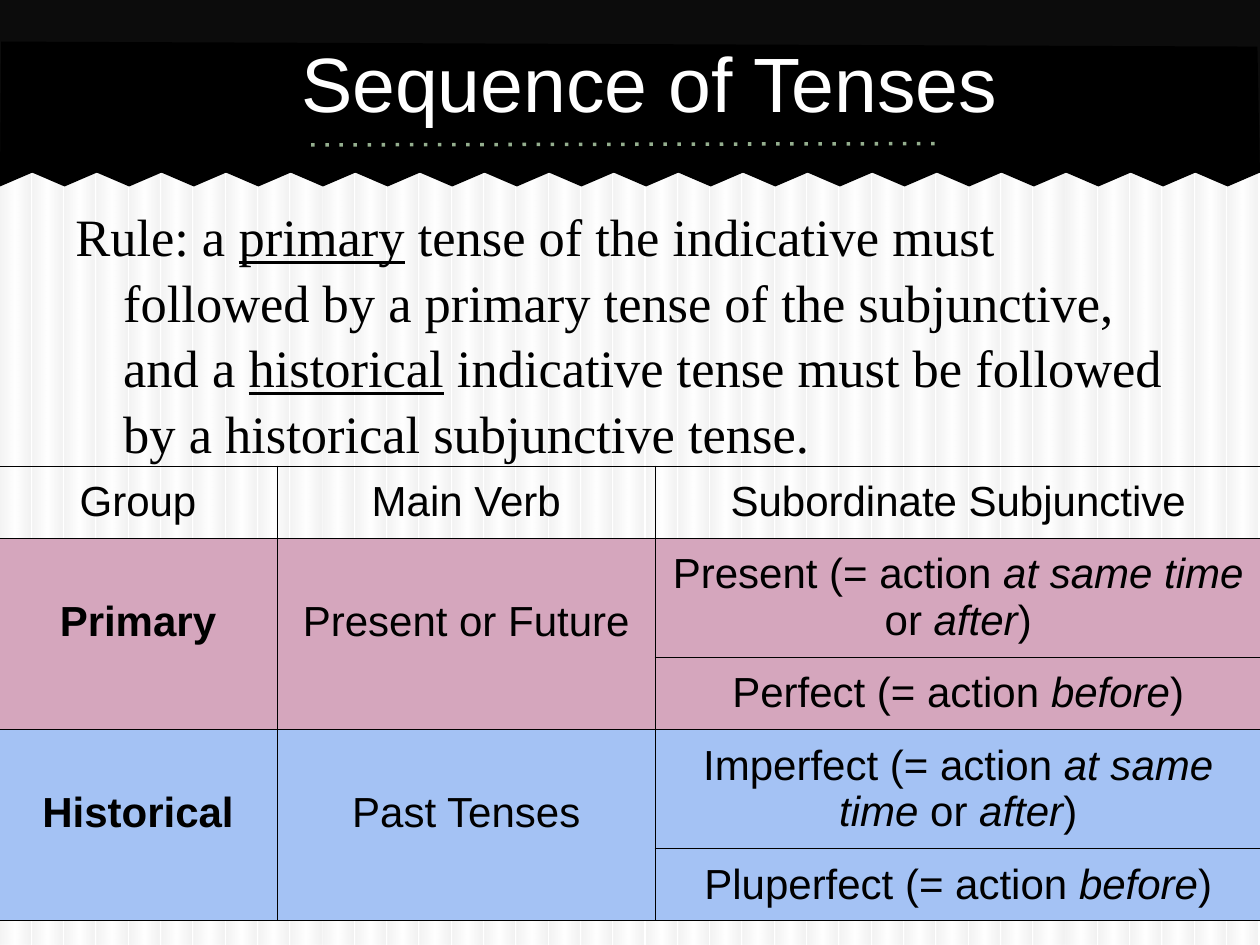
from lxml import etree
from pptx import Presentation, util as u
from pptx.dml.color import RGBColor
from pptx.enum import shapes, text
from pptx.oxml import parse_xml
from pptx.oxml.ns import nsdecls, qn

COLUMNS, ROWS = 100, 75
STRIPES = 39
SANS, SERIF = "Arial", "Times New Roman"
BLACK, WHITE = "000000", "FFFFFF"
PINK, BLUE = "D5A6BD", "A4C2F4"


def rgb(hex_code):
    return RGBColor.from_string(hex_code)


def grid(steps):
    """Length of a number of grid columns or rows, each a tenth of an inch."""
    return u.Inches(steps / 10)


class TenseSlide:
    """Holds the deck's style and the slide being drawn."""

    margins = dict.fromkeys(
        ("margin_left", "margin_right", "margin_top", "margin_bottom"), grid(1))

    def __init__(self):
        self.deck = Presentation()
        self.deck.slide_width, self.deck.slide_height = grid(COLUMNS), grid(ROWS)
        self.slide = self.deck.slides.add_slide(self.deck.slide_layouts[5])
        self.shapes = self.slide.shapes

    def apply(self, target, formats):
        for name, value in formats.items():
            setattr(target, name, value)

    def place(self, shape, left, top, width, height):
        sides = zip(("left", "top", "width", "height"), (left, top, width, height))
        self.apply(shape, {name: grid(steps) for name, steps in sides})

    def paint(self, shape, color):
        shape.shadow.inherit = False
        shape.line.fill.background()
        shape.fill.solid()
        shape.fill.fore_color.rgb = rgb(color)

    def add_runs(self, paragraph, runs, size, font, color=BLACK, align=text.PP_ALIGN.CENTER):
        """Fill a paragraph from (words, format dict) pairs."""
        paragraph.alignment = align
        for words, formats in runs:
            run = paragraph.add_run()
            run.text = words
            run.font.color.rgb = rgb(color)
            self.apply(run.font, {"size": u.Pt(size), "name": font, "bold": False, **formats})

    def indent(self, paragraph, left, first):
        properties = paragraph._p.get_or_add_pPr()
        properties.set("marL", str(grid(left)))
        properties.set("indent", str(grid(first)))

    def rectangle(self, left, top, width, height, color):
        box = self.shapes.add_shape(
            shapes.MSO_SHAPE.RECTANGLE, *map(grid, (left, top, width, height)))
        self.paint(box, color)
        return box

    def stripe(self, left, width):
        """Full-height stripe, faint grey at both edges and white in the middle."""
        band = self.rectangle(left, 0.1, width, ROWS - 0.1, WHITE)
        stops = "".join(
            f'<a:gs pos="{share}000"><a:srgbClr val="{color}"><a:alpha val="19000"/>'
            "</a:srgbClr></a:gs>"
            for share, color in ((0, "BFBFBF"), (50, WHITE), (97, "BFBFBF"), (100, "BFBFBF")))
        gradient = parse_xml(
            f'<a:gradFill {nsdecls("a")} rotWithShape="1"><a:gsLst>{stops}</a:gsLst>'
            '<a:lin ang="0" scaled="0"/></a:gradFill>')
        properties = band._element.spPr
        properties.replace(properties.find(qn("a:solidFill")), gradient)

    def outline(self, points, color):
        corners = [(grid(x), grid(y)) for x, y in points]
        builder = self.shapes.build_freeform(*corners[0])
        builder.add_line_segments(corners[1:], close=True)
        self.paint(builder.convert_to_shape(), color)

    def dotted_line(self, start, end, color, width):
        rule = self.shapes.add_connector(
            shapes.MSO_CONNECTOR.STRAIGHT, *map(grid, start + end))
        rule.line.color.rgb = rgb(color)
        rule.line.width = u.Pt(width)
        dash = etree.SubElement(rule.line._get_or_add_ln(), qn("a:prstDash"))
        dash.set("val", "dot")
        etree.SubElement(rule._element.spPr, qn("a:effectLst"))

    def title(self, words, *place):
        heading = self.shapes.title
        self.shapes._spTree.append(heading._element)  # in front of the banner
        self.place(heading, *place)
        frame = heading.text_frame
        self.apply(frame, {**self.margins, "word_wrap": True,
                           "vertical_anchor": text.MSO_ANCHOR.MIDDLE})
        self.add_runs(frame.paragraphs[0], [(words, {})], 44, SANS, WHITE)
        self.indent(frame.paragraphs[0], 0, 3.1)

    def paragraph(self, runs, *place):
        """Left-aligned text with a hanging indent."""
        frame = self.shapes.add_textbox(*map(grid, place)).text_frame
        self.apply(frame, {**self.margins, "word_wrap": True})
        body = frame.paragraphs[0]
        self.add_runs(body, runs, 30, SERIF, align=text.PP_ALIGN.LEFT)
        self.apply(body, {"line_spacing": 1.04, "space_before": u.Pt(2)})
        self.indent(body, 3.8, -3.8)

    def cell_style(self, cell, color):
        self.apply(cell, self.margins)
        if color:
            cell.fill.solid()
            cell.fill.fore_color.rgb = rgb(color)
        else:
            cell.fill.background()
        for index, side in enumerate("LRTB"):
            cell._tc.get_or_add_tcPr().insert(index, parse_xml(
                f'<a:ln{side} {nsdecls("a")} w="{u.Pt(0.75)}"><a:solidFill>'
                f'<a:srgbClr val="{BLACK}"/></a:solidFill></a:ln{side}>'))

    def table(self, left, top, widths, heights, fills):
        frame = self.shapes.add_table(
            len(heights), len(widths),
            *map(grid, (left, top, sum(widths), sum(heights))))
        table = frame.table
        self.apply(table, {"first_row": False, "horz_banding": False})
        for column, width in zip(table.columns, widths):
            column.width = grid(width)
        for row, height, color in zip(table.rows, heights, fills):
            row.height = grid(height)
            for cell in row.cells:
                self.cell_style(cell, color)
        return table

    def cell_text(self, cell, *runs):
        self.add_runs(cell.text_frame.paragraphs[0], runs, 24, SANS)


def main():
    page = TenseSlide()
    pitch = COLUMNS / STRIPES
    for number in range(STRIPES):
        page.stripe(number * pitch, 2.4)

    page.rectangle(0, 0, COLUMNS, 13.7, "0C0C0C")
    teeth = [(COLUMNS - number * pitch, 14.8 if number % 2 else 13.7)
             for number in range(STRIPES + 1)]
    page.outline([(0.1, 3.3), (99.8, 3.7)] + teeth, BLACK)
    page.dotted_line((24.7, 11.5), (75, 11.4), "94AE8E", 2)

    underlined, italic = {"underline": True}, {"italic": True}
    page.paragraph([
        ("Rule: a ", {}), ("primary", underlined),
        (" tense of the indicative must followed by a primary tense of the"
         " subjunctive, and a ", {}),
        ("historical", underlined),
        (" indicative tense must be followed by a historical subjunctive tense.", {}),
    ], 5, 15, 90, 21.5)
    page.title("Sequence of Tenses", 5, 0.2, 90, 12.5)

    tenses = page.table(-0.1, 37, (22.1, 30, 48.1), (5.7, 9.45, 5.7, 9.45, 5.7),
                        (None, PINK, PINK, BLUE, BLUE))
    for column, heading in enumerate(("Group", "Main Verb", "Subordinate Subjunctive")):
        page.cell_text(tenses.cell(0, column), (heading, {}))
    groups = (("Primary", "Present or Future", "Present", "Perfect"),
              ("Historical", "Past Tenses", "Imperfect", "Pluperfect"))
    for row, (group, main_verb, same_time, before) in zip((1, 3), groups):
        for column, (words, formats) in enumerate(((group, {"bold": True}), (main_verb, {}))):
            cell = tenses.cell(row, column)
            cell.merge(tenses.cell(row + 1, column))
            page.apply(cell, {"margin_top": grid(4.8), "margin_bottom": 0})
            page.cell_text(cell, (words, formats))
        page.cell_text(tenses.cell(row, 2), (f"{same_time} (= action ", {}),
                       ("at same time ", italic), ("or ", {}), ("after", italic), (")", {}))
        page.cell_text(tenses.cell(row + 1, 2), (f"{before} (= action ", {}),
                       ("before", italic), (")", {}))

    page.deck.save("out.pptx")


if __name__ == "__main__":
    main()
